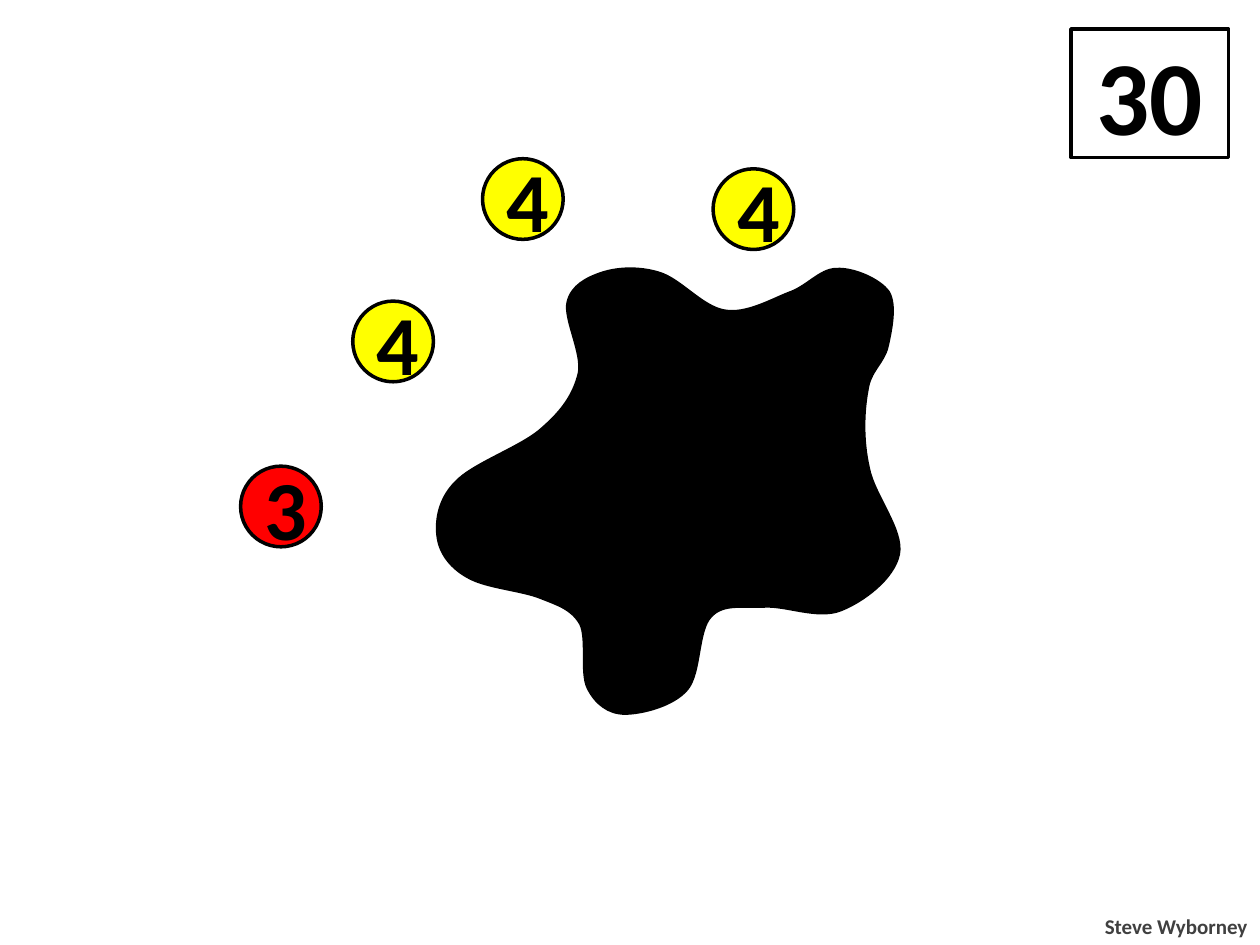
"""Build a number puzzle slide with numbered dots around an ink blot."""
from lxml import etree
from pptx import Presentation
from pptx import util as u
from pptx.dml.color import RGBColor
from pptx.enum import shapes, text
from pptx.oxml.ns import qn

COLORS = {"ink": "000000", "paper": "FFFFFF", "yellow": "FFFF00",
          "red": "FF0000", "credit": "404040"}
FONT = "Calibri"
DOT_SIZE = 0.64
TOTAL = ("30", 8.5, 0.23, 1.25, 1.02)
CREDIT = ("Steve Wyborney", 8.66, 7.2, 1.34, 0.3)
DOTS = [
    ("4", 2.8, 2.39, "yellow"),
    ("4", 3.83, 1.26, "yellow"),
    ("4", 5.66, 1.34, "yellow"),
    ("3", 1.91, 3.7, "red"),
]
BLOT_START = (3.72, 4.58)
BLOT_CURVES = [
    ((3.59, 4.51), (3.5, 4.4), (3.48, 4.27)),
    ((3.46, 4.15), (3.48, 3.97), (3.62, 3.83)),
    ((3.76, 3.68), (4.15, 3.55), (4.31, 3.4)),
    ((4.47, 3.26), (4.56, 3.13), (4.6, 2.96)),
    ((4.63, 2.8), (4.48, 2.53), (4.51, 2.4)),
    ((4.54, 2.27), (4.66, 2.21), (4.78, 2.17)),
    ((4.9, 2.13), (5.07, 2.12), (5.23, 2.17)),
    ((5.4, 2.22), (5.57, 2.44), (5.75, 2.47)),
    ((5.92, 2.5), (6.11, 2.39), (6.26, 2.33)),
    ((6.41, 2.28), (6.51, 2.14), (6.64, 2.14)),
    ((6.77, 2.13), (6.98, 2.22), (7.05, 2.32)),
    ((7.11, 2.42), (7.07, 2.62), (7.04, 2.75)),
    ((7.01, 2.88), (6.9, 2.94), (6.88, 3.1)),
    ((6.85, 3.26), (6.84, 3.49), (6.89, 3.71)),
    ((6.93, 3.93), (7.17, 4.21), (7.13, 4.4)),
    ((7.09, 4.59), (6.85, 4.77), (6.67, 4.84)),
    ((6.49, 4.91), (6.24, 4.8), (6.07, 4.81)),
    ((5.9, 4.82), (5.74, 4.78), (5.64, 4.89)),
    ((5.53, 5), (5.56, 5.34), (5.45, 5.47)),
    ((5.34, 5.6), (5.09, 5.66), (4.96, 5.66)),
    ((4.83, 5.66), (4.73, 5.58), (4.67, 5.46)),
    ((4.61, 5.34), (4.67, 5.07), (4.61, 4.95)),
    ((4.54, 4.83), (4.44, 4.8), (4.29, 4.74)),
    ((4.14, 4.68), (3.86, 4.66), BLOT_START),
]


def color(name):
    return RGBColor.from_string(COLORS[name])


def paint(shape, fill):
    shape.shadow.inherit = False
    shape.fill.solid()
    shape.fill.fore_color.rgb = color(fill)
    shape.line.color.rgb = color("ink")
    shape.line.width = u.Pt(2)


def write(shape, words, size, ink="ink", align=text.PP_ALIGN.CENTER):
    paragraph = shape.text_frame.paragraphs[0]
    paragraph.text = words
    paragraph.alignment = align
    paragraph.font.name = FONT
    paragraph.font.size = u.Pt(size)
    paragraph.font.bold = True
    paragraph.font.color.rgb = color(ink)


def add_number(slide, kind, words, box, fill, size):
    shape = slide.shapes.add_shape(kind, *map(u.Inches, box))
    paint(shape, fill)
    shape.text_frame.vertical_anchor = text.MSO_ANCHOR.MIDDLE
    write(shape, words, size)


def curve_points(start, curve, steps=8):
    for step in range(1, steps + 1):
        t = step / steps
        weights = ((1 - t) ** 3, 3 * t * (1 - t) ** 2, 3 * t * t * (1 - t), t ** 3)
        yield tuple(u.Inches(sum(w * point[axis] for w, point in zip(weights, (start, *curve))))
                    for axis in (0, 1))


def add_blot(slide):
    starts = [BLOT_START] + [curve[-1] for curve in BLOT_CURVES[:-1]]
    points = [point for start, curve in zip(starts, BLOT_CURVES)
              for point in curve_points(start, curve)]
    builder = slide.shapes.build_freeform(*map(u.Inches, BLOT_START))
    builder.add_line_segments(points, close=True)
    shape = builder.convert_to_shape()
    paint(shape, "ink")
    outline = shape.element.xpath(".//a:path")[0]
    for line in outline.findall(qn("a:lnTo")):
        outline.remove(line)
    closing = outline.find(qn("a:close"))
    for curve in BLOT_CURVES:
        bezier = etree.Element(qn("a:cubicBezTo"))
        for x, y in curve:
            etree.SubElement(bezier, qn("a:pt"), x=str(u.Inches(x) - shape.left),
                             y=str(u.Inches(y) - shape.top))
        closing.addprevious(bezier)


def main():
    presentation = Presentation()
    presentation.slide_width = u.Inches(10)
    presentation.slide_height = u.Inches(7.5)
    slide = presentation.slides.add_slide(presentation.slide_layouts[6])

    total, *box = TOTAL
    add_number(slide, shapes.MSO_SHAPE.RECTANGLE, total, box, "paper", 60)

    name, *box = CREDIT
    credit = slide.shapes.add_textbox(*map(u.Inches, box))
    credit.text_frame.word_wrap = False
    credit.text_frame.auto_size = text.MSO_AUTO_SIZE.SHAPE_TO_FIT_TEXT
    write(credit, name, 12, "credit", text.PP_ALIGN.RIGHT)

    for number, left, top, fill in DOTS:
        add_number(slide, shapes.MSO_SHAPE.OVAL, number,
                   (left, top, DOT_SIZE, DOT_SIZE), fill, 48)
    add_blot(slide)
    presentation.save("out.pptx")


if __name__ == "__main__":
    main()
